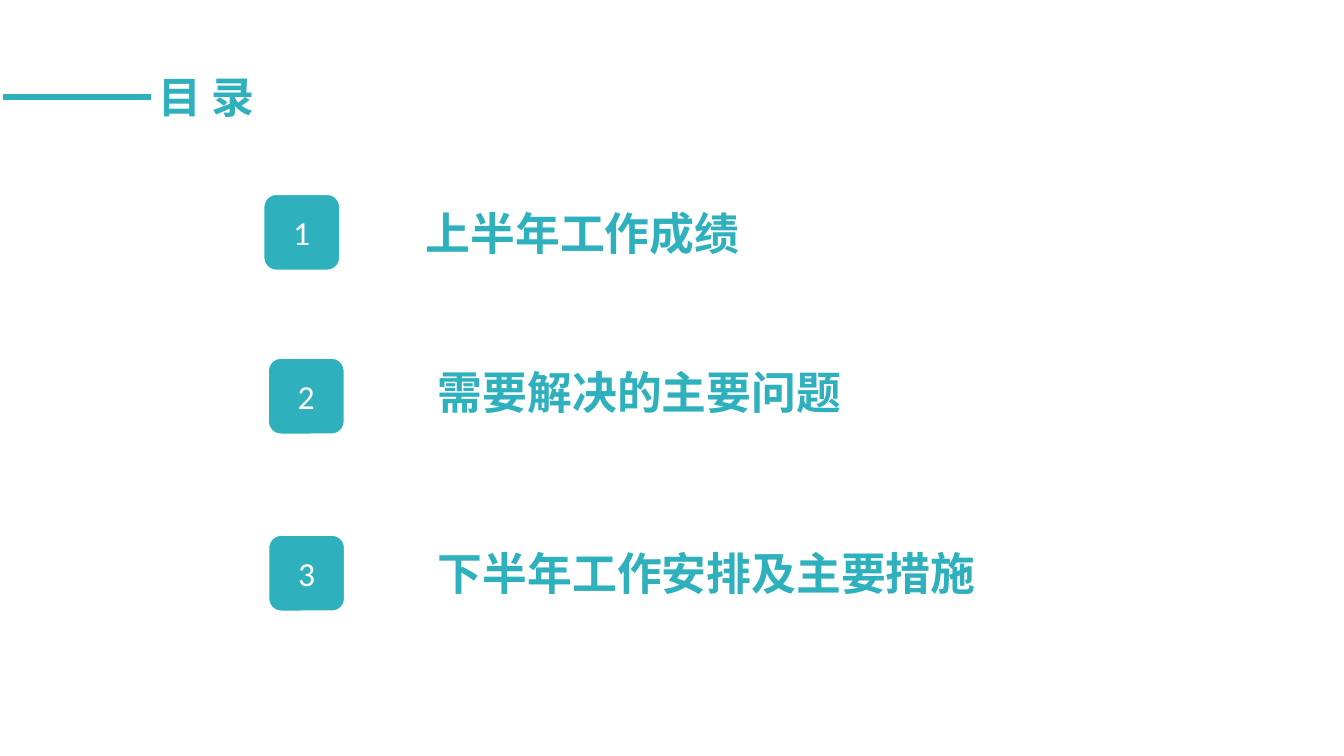
from lxml import etree
from pptx import Presentation
from pptx.dml.color import RGBColor
from pptx.enum.shapes import MSO_CONNECTOR, MSO_SHAPE
from pptx.enum.text import MSO_ANCHOR, MSO_AUTO_SIZE, PP_ALIGN
from pptx.oxml.ns import qn
from pptx.util import Pt

ROUNDED = MSO_SHAPE.ROUNDED_RECTANGLE
STRAIGHT = MSO_CONNECTOR.STRAIGHT
TOP, MIDDLE = MSO_ANCHOR.TOP, MSO_ANCHOR.MIDDLE
LEFT, CENTER = PP_ALIGN.LEFT, PP_ALIGN.CENTER
FIXED_SIZE, FIT_SHAPE = MSO_AUTO_SIZE.NONE, MSO_AUTO_SIZE.SHAPE_TO_FIT_TEXT

TEAL, WHITE = "2EB0BD", "FFFFFF"
LATIN, CJK = "Calibri", "Noto Sans CJK SC"
BADGE_SIZE = 41
LEFT_SIDE = 1

# Heading, font, badge left and top, heading left, top and width
CHAPTERS = [
    ("上半年工作成绩", CJK, 141.2, 104, 221, 106.8, 182.2),
    ("需要解决的主要问题", CJK, 143.6, 191.8, 227.5, 191.8, 230.4),
    ("下半年工作安排及主要措施", LATIN, 143.8, 286.6, 227.5, 288.7, 302.4),
]


def color(value):
    return RGBColor.from_string(value)


def place(shape, left, top, width, height):
    shape.left, shape.top = Pt(left), Pt(top)
    shape.width, shape.height = Pt(width), Pt(height)


def write(frame, text, size, font, ink, align=LEFT, bold=False):
    paragraph = frame.paragraphs[0]
    paragraph.alignment = align
    run = paragraph.add_run()
    run.text = text
    run.font.name = font
    run.font.size = Pt(size)
    run.font.bold = bold
    run.font.color.rgb = color(ink)
    # Typeface for the Chinese characters
    east_asian = etree.Element(qn("a:ea"), typeface=CJK)
    run.font._element.find(qn("a:latin")).addnext(east_asian)


def add_title(slide, text):
    title = slide.shapes.title
    # Wide enough to keep the title on one line
    place(title, 80.7, 36, 80, 31.7)
    frame = title.text_frame
    frame.word_wrap = False
    frame.auto_size = FIXED_SIZE
    frame.vertical_anchor = TOP
    frame.margin_left = frame.margin_right = Pt(4.3)
    frame.margin_top = frame.margin_bottom = Pt(2)
    write(frame, text, 23, LATIN, TEAL, bold=True)
    return title


def add_title_rule(slide, title):
    middle = title.top + title.height // 2
    rule = slide.shapes.add_connector(STRAIGHT, Pt(1.5), middle, title.left, middle)
    rule.end_connect(title, LEFT_SIDE)
    rule.line.color.rgb = color(TEAL)
    rule.line.width = Pt(3)
    etree.SubElement(rule._element.spPr, qn("a:effectLst"))


def add_badge(slide, number, left, top):
    badge = slide.shapes.add_shape(
        ROUNDED, Pt(left), Pt(top), Pt(BADGE_SIZE), Pt(BADGE_SIZE))
    badge.shadow.inherit = False
    badge.fill.solid()
    badge.fill.fore_color.rgb = color(TEAL)
    badge.line.color.rgb = color(WHITE)
    badge.line.width = Pt(1)
    badge.text_frame.vertical_anchor = MIDDLE
    write(badge.text_frame, str(number), 18, LATIN, WHITE, align=CENTER)


def add_heading(slide, text, font, left, top, width):
    heading = slide.shapes.add_textbox(Pt(left), Pt(top), Pt(width), Pt(36))
    heading.text_frame.word_wrap = False
    heading.text_frame.auto_size = FIT_SHAPE
    write(heading.text_frame, text, 24, font, TEAL, bold=True)


def main():
    deck = Presentation()
    deck.slide_width, deck.slide_height = Pt(720), Pt(405)
    slide = deck.slides.add_slide(deck.slide_layouts.get_by_name("Title Only"))

    # Title with the rule leading to it
    title = add_title(slide, "目 录")
    add_title_rule(slide, title)

    # Numbered chapters
    for number, chapter in enumerate(CHAPTERS, start=1):
        text, font, badge_left, badge_top, left, top, width = chapter
        add_badge(slide, number, badge_left, badge_top)
        add_heading(slide, text, font, left, top, width)

    deck.save("out.pptx")


if __name__ == "__main__":
    main()
